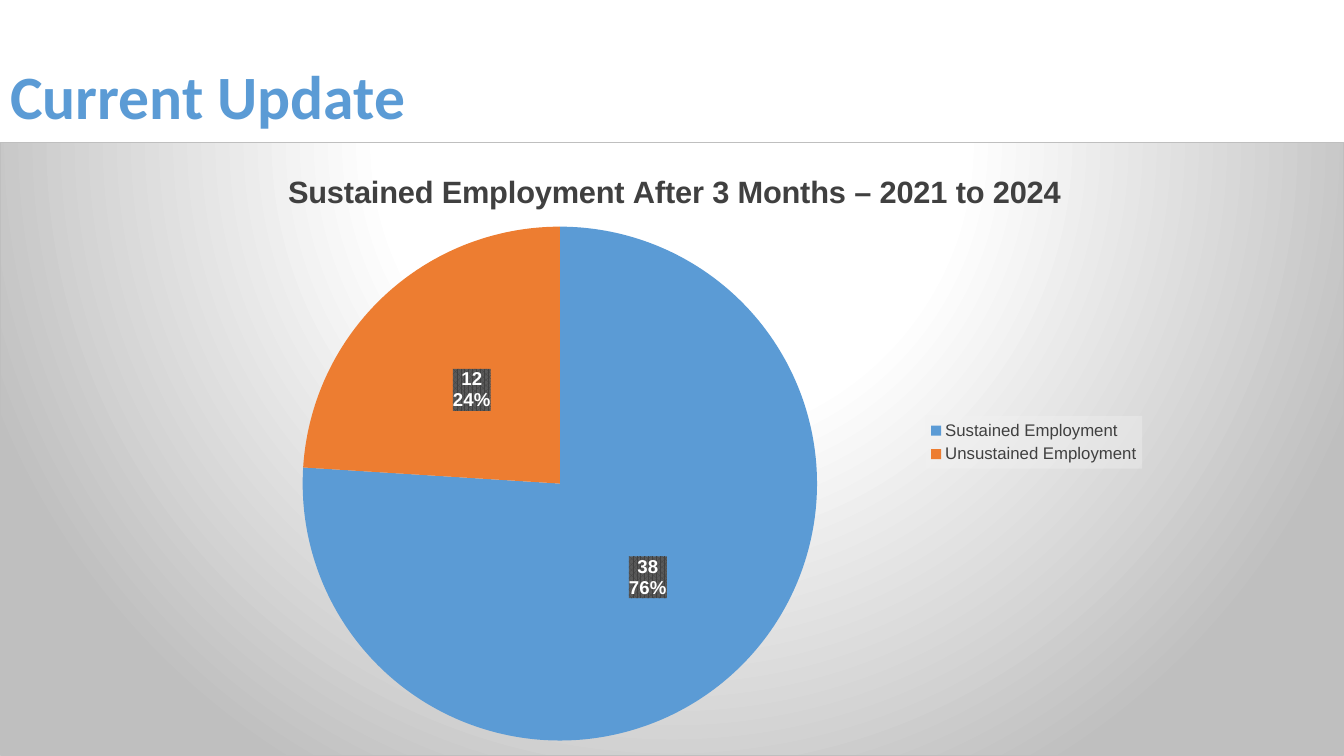
from dataclasses import dataclass

from lxml import etree
from pptx import Presentation
from pptx.chart.data import CategoryChartData
from pptx.dml.color import RGBColor
from pptx.enum.chart import XL_CHART_TYPE, XL_LABEL_POSITION, XL_LEGEND_POSITION
from pptx.enum.text import MSO_ANCHOR, PP_ALIGN
from pptx.oxml import parse_xml
from pptx.oxml.ns import nsdecls, qn
from pptx.util import Pt

PIE = XL_CHART_TYPE.PIE
CENTER = XL_LABEL_POSITION.CENTER
RIGHT = XL_LEGEND_POSITION.RIGHT
MIDDLE = MSO_ANCHOR.MIDDLE
LEFT = PP_ALIGN.LEFT


@dataclass(frozen=True)
class Theme:
    blue: str = "5B9BD5"
    orange: str = "ED7D31"
    white: str = "FFFFFF"
    black: str = "000000"
    dark: str = "404040"
    mid: str = "595959"
    gray: str = "BFBFBF"
    pale: str = "F2F2F2"
    head_face: str = "Calibri"
    face: str = "Arial"
    head: float = 44
    title: float = 22
    label: float = 13.3
    key: float = 12
    base: float = 10


THEME = Theme()


def style(font, size, color, face=THEME.face, bold=False):
    font.size = Pt(size)
    font.name = face
    font.bold = bold
    font.color.rgb = RGBColor.from_string(color)


def write(frame, text, align=None, spacing=None, **look):
    frame.text = text
    para = frame.paragraphs[0]
    para.alignment = align
    para.line_spacing = spacing
    style(para.runs[0].font, **look)


def solid(color, alpha=100):
    return (f'<a:solidFill><a:srgbClr val="{color}">'
            f'<a:alpha val="{alpha * 1000}"/></a:srgbClr></a:solidFill>')


def shell(inner):
    """Build the shape format of a chart part."""
    return parse_xml(f'<c:spPr {nsdecls("c", "a")}>{inner}</c:spPr>')


def place(part, index, inner=False, **spots):
    """Set a chart part's layout as fractions of the chart."""
    for old in part.findall(qn("c:layout")):
        part.remove(old)
    layout = etree.Element(qn("c:layout"))
    manual = etree.SubElement(layout, qn("c:manualLayout"))
    tags = [("layoutTarget", "inner")] if inner else []
    tags += [("xMode", "edge"), ("yMode", "edge"), *spots.items()]
    for tag, val in tags:
        etree.SubElement(manual, qn(f"c:{tag}")).set("val", str(val))
    part.insert(index, layout)


def add_head(slide, left, top, width, height):
    head = slide.shapes.title
    head.left, head.top, head.width, head.height = map(
        Pt, (left, top, width, height))
    head.text_frame.vertical_anchor = MIDDLE
    write(head.text_frame, "Current Update", align=LEFT, spacing=0.9,
          size=THEME.head, color=THEME.blue, face=THEME.head_face, bold=True)


def add_pie(slide, left, top, width, height):
    data = CategoryChartData()
    data.categories = ["Sustained Employment", "Unsustained Employment"]
    data.add_series("Series 1", (38, 12))
    chart = slide.shapes.add_chart(
        PIE, *map(Pt, (left, top, width, height)), data).chart
    style(chart.font, THEME.base, THEME.black)
    root = chart.element

    # Backdrop
    stops = "".join(
        f'<a:gs pos="{pos * 1000}"><a:srgbClr val="{color}"/></a:gs>'
        for pos, color in ((0, THEME.white), (39, THEME.white), (100, THEME.gray)))
    root.find(qn("c:chart")).addnext(shell(
        f'<a:gradFill><a:gsLst>{stops}</a:gsLst><a:path path="circle">'
        '<a:fillToRect l="50000" t="-80000" r="50000" b="180000"/></a:path>'
        f'</a:gradFill><a:ln w="{Pt(0.75)}">{solid(THEME.gray)}</a:ln>'))

    # Chart title
    chart.has_title = True
    title = chart.chart_title
    write(title.text_frame, "Sustained Employment After 3 Months – 2021 to 2024",
          size=THEME.title, color=THEME.dark, bold=True)
    title.include_in_layout = False
    place(title.element, 1, x=0.21, y=0.04)

    # Slices
    place(root.find(f".//{qn('c:plotArea')}"), 0, inner=True,
          x=0.225, y=0.137, w=0.383, h=0.839)
    plot = chart.plots[0]
    plot.vary_by_categories = True
    pie = plot.series[0]
    for i, color in enumerate((THEME.blue, THEME.orange)):
        fill = pie.points[i].format.fill
        fill.solid()
        fill.fore_color.rgb = RGBColor.from_string(color)

    # Slice labels
    labels = pie.data_labels
    style(labels.font, THEME.label, THEME.white, bold=True)
    labels.show_value = labels.show_percentage = True
    labels.position = CENTER
    node = labels.font and pie.data_labels._element
    node.find(qn("c:txPr")).addprevious(shell(
        f'<a:pattFill prst="pct75"><a:fgClr><a:srgbClr val="{THEME.dark}"/></a:fgClr>'
        f'<a:bgClr><a:srgbClr val="{THEME.mid}"/></a:bgClr></a:pattFill>'))
    split = etree.Element(qn("c:separator"))
    split.text = "\n"
    last = node.find(qn("c:showBubbleSize"))
    if last is None:
        last = node.find(qn("c:showPercent"))
    last.addnext(split)

    # Legend
    chart.has_legend = True
    legend = chart.legend
    legend.position = RIGHT
    legend.include_in_layout = False
    style(legend.font, THEME.key, THEME.dark)
    key = root.find(f".//{qn('c:legend')}")
    place(key, 1, x=0.689, y=0.446, w=0.161, h=0.086)
    key.find(qn("c:txPr")).addprevious(shell(solid(THEME.pale, 39)))


def main():
    deck = Presentation()
    deck.slide_width, deck.slide_height = Pt(960), Pt(540)
    slide = deck.slides.add_slide(deck.slide_layouts[5])
    add_head(slide, 0, 18.7, 828, 104.4)
    add_pie(slide, 0, 101.5, 960, 438.5)
    deck.save("out.pptx")


if __name__ == "__main__":
    main()
